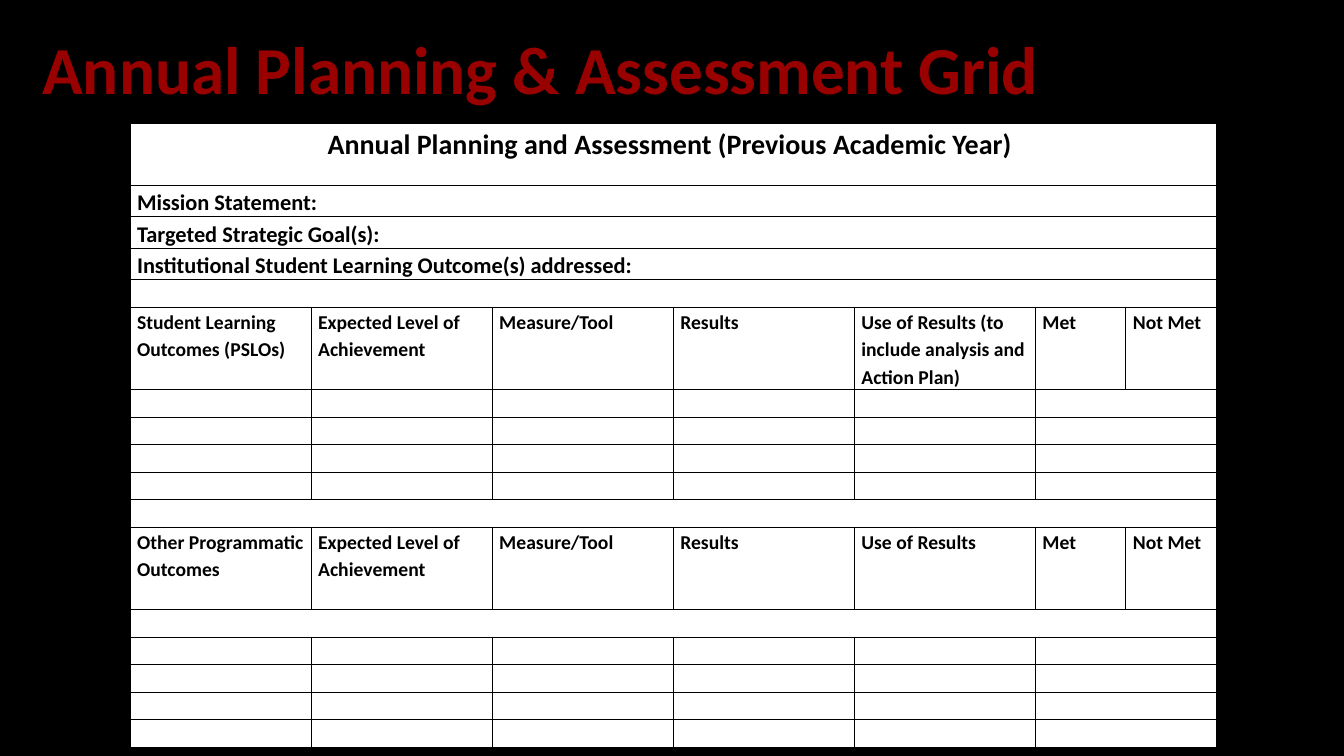
import lxml.etree
import pptx
import pptx.dml.color
import pptx.enum.text
import pptx.oxml.ns
import pptx.util

EMU_PER_PX = 3048  # 300 px to the inch
COLUMN_WIDTHS = [539] * 5 + [269] * 2
ENTRY_HEIGHT = 82
HEADING_HEIGHT = 245
PLANNING_FIELDS = [
    "Mission Statement:",
    "Targeted Strategic Goal(s):",
    "Institutional Student Learning Outcome(s) addressed:",
]
SHARED_HEADINGS = ["Expected Level of Achievement", "Measure/Tool", "Results"]
STATUS_HEADINGS = ["Met", "Not Met"]
STUDENT_HEADINGS = [
    "Student Learning Outcomes (PSLOs)",
    *SHARED_HEADINGS,
    "Use of Results (to include analysis and Action Plan)",
    *STATUS_HEADINGS,
]
PROGRAM_HEADINGS = [
    "Other Programmatic Outcomes",
    *SHARED_HEADINGS,
    "Use of Results",
    *STATUS_HEADINGS,
]


def px(length):
    return pptx.util.Emu(length * EMU_PER_PX)


def color(hex_string):
    return pptx.dml.color.RGBColor.from_string(hex_string)


def write_text(text_frame, text, *, font, size, fill, bold=True, align="LEFT", spacing=1.0):
    paragraph = text_frame.paragraphs[0]
    paragraph.alignment = getattr(pptx.enum.text.PP_ALIGN, align)
    paragraph.line_spacing = spacing
    if not text:
        # An empty cell still needs its text size, so that its row does not grow
        lxml.etree.SubElement(
            paragraph._p, pptx.oxml.ns.qn("a:endParaRPr"), sz=str(size * 100)
        )
        return
    run = paragraph.add_run()
    run.text = text
    run.font.name = font
    run.font.size = pptx.util.Pt(size)
    run.font.bold = bold
    run.font.color.rgb = color(fill)


class GridSlide:
    font = "Calibri"
    background = "000000"
    accent = "990000"
    ink = "000000"
    paper = "FFFFFF"

    def __init__(self, presentation):
        self.slide = presentation.slides.add_slide(presentation.slide_layouts[5])
        self.slide.background.fill.solid()
        self.slide.background.fill.fore_color.rgb = color(self.background)

    def title(self, text, left, top, width, height):
        shape = self.slide.shapes.title
        shape.left, shape.top = px(left), px(top)
        shape.width, shape.height = px(width), px(height)
        text_frame = shape.text_frame
        text_frame.word_wrap = True
        text_frame.auto_size = pptx.enum.text.MSO_AUTO_SIZE.NONE
        text_frame.vertical_anchor = pptx.enum.text.MSO_ANCHOR.MIDDLE
        write_text(text_frame, text, font=self.font, size=48, fill=self.accent, spacing=0.9)

    def border(self, cell):
        properties = cell._tc.get_or_add_tcPr()
        qn = pptx.oxml.ns.qn
        for side in ("a:lnL", "a:lnR", "a:lnT", "a:lnB"):
            line = lxml.etree.SubElement(properties, qn(side), w=str(pptx.util.Pt(1)))
            solid = lxml.etree.SubElement(line, qn("a:solidFill"))
            lxml.etree.SubElement(solid, qn("a:srgbClr"), val=self.ink)

    def table(self, rows, left, top):
        """Each row is (height, text size, alignment, texts); short rows merge to the right."""
        shape = self.slide.shapes.add_table(
            len(rows), len(COLUMN_WIDTHS), px(left), px(top),
            px(sum(COLUMN_WIDTHS)), px(sum(row[0] for row in rows)),
        )
        table = shape.table
        table.first_row = table.horz_banding = False
        for column, width in zip(table.columns, COLUMN_WIDTHS):
            column.width = px(width)
        last = len(COLUMN_WIDTHS) - 1
        for index, (height, size, align, texts) in enumerate(rows):
            table.rows[index].height = px(height)
            for cell in table.rows[index].cells:
                self.border(cell)
                cell.fill.solid()
                cell.fill.fore_color.rgb = color(self.paper)
                cell.margin_left, cell.margin_right = px(21), px(22)
                cell.margin_top = cell.margin_bottom = 0
            if len(texts) <= last:
                table.cell(index, len(texts) - 1).merge(table.cell(index, last))
            for column, text in enumerate(texts):
                write_text(
                    table.cell(index, column).text_frame, text, font=self.font,
                    size=size, fill=self.ink, align=align, spacing=1.15,
                )


def grid_rows():
    divider = (ENTRY_HEIGHT, 14, "LEFT", [""])
    entries = [(ENTRY_HEIGHT, 14, "LEFT", [""] * 6)] * 4
    return [
        (185, 20, "CENTER", ["Annual Planning and Assessment (Previous Academic Year) "]),
        *[(94, 16, "LEFT", [field]) for field in PLANNING_FIELDS],
        divider,
        (HEADING_HEIGHT, 14, "LEFT", STUDENT_HEADINGS),
        *entries,
        divider,
        (HEADING_HEIGHT, 14, "LEFT", PROGRAM_HEADINGS),
        divider,
        *entries,
    ]


def main():
    presentation = pptx.Presentation()
    presentation.slide_width, presentation.slide_height = px(4000), px(2250)
    grid = GridSlide(presentation)
    # Heading
    grid.title("Annual Planning & Assessment Grid", 96, 0, 3450, 435)
    # Planning and assessment grid
    grid.table(grid_rows(), 387, 366)
    presentation.save("out.pptx")


if __name__ == "__main__":
    main()
